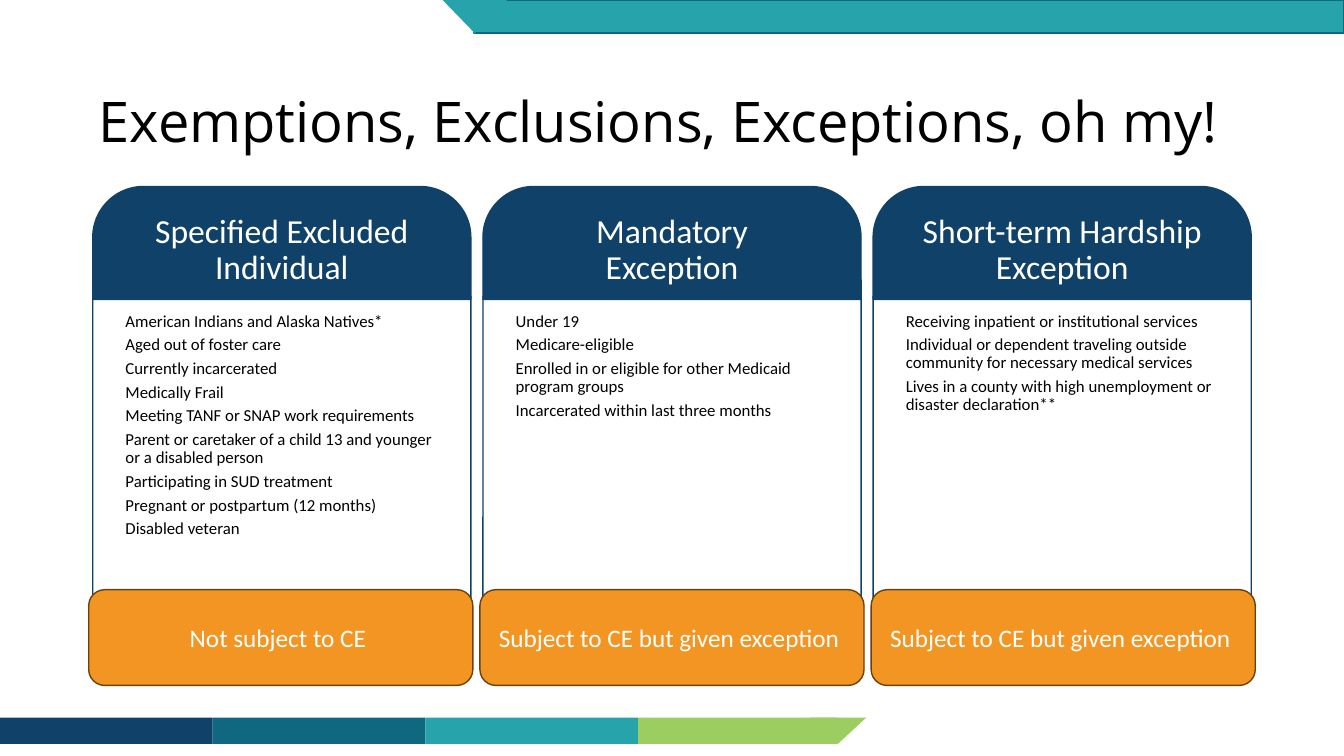
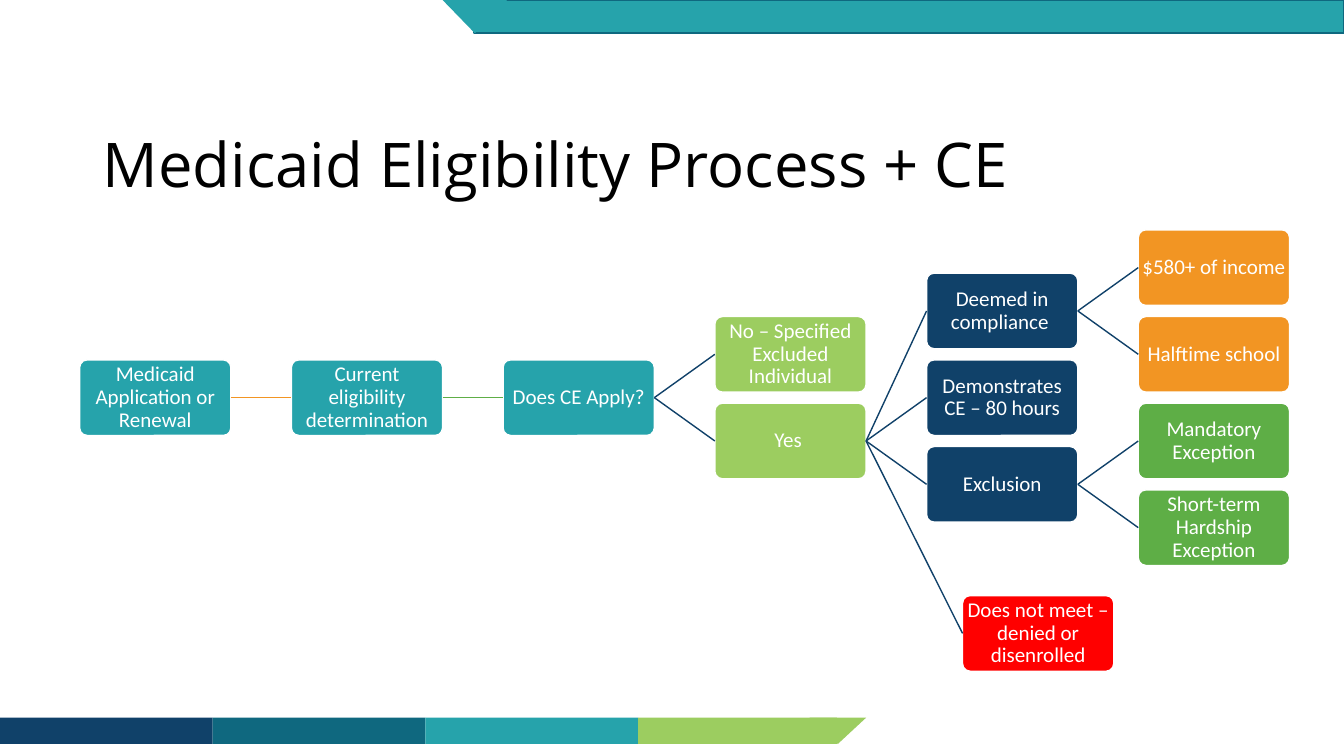
from lxml import etree
from pptx import Presentation
from pptx.dml.color import RGBColor
from pptx.enum.shapes import MSO_CONNECTOR, MSO_SHAPE as SHAPE
from pptx.enum.text import MSO_ANCHOR as ANCHOR, MSO_AUTO_SIZE, PP_ALIGN as ALIGN
from pptx.oxml.ns import qn
from pptx.util import Inches, Pt

NAVY = RGBColor(0x10, 0x41, 0x69)
PETROL = RGBColor(0x0F, 0x68, 0x7F)
TEAL = RGBColor(0x26, 0xA3, 0xAB)
LIME = RGBColor(0x9C, 0xCD, 0x60)
GREEN = RGBColor(0x5E, 0xAE, 0x46)
ORANGE = RGBColor(0xF2, 0x95, 0x23)
BROWN = RGBColor(0x6A, 0x41, 0x0F)
RED = RGBColor(0xFF, 0x00, 0x00)
WHITE = RGBColor(0xFF, 0xFF, 0xFF)
BLACK = RGBColor(0x00, 0x00, 0x00)

SLIDE_WIDTH, SLIDE_HEIGHT = 13.33, 7.5
TITLE_FONT, BODY_FONT = "Open Sans", "Calibri"
TITLE_SIZE = (11.5, 1.45)

FOOTER_TOP, FOOTER_HEIGHT, FOOTER_STEP = 7.12, 0.26, 2.11
FOOTER_BANDS = [(NAVY, 2.11), (PETROL, 2.11), (TEAL, 2.11), (LIME, 1.97)]
HEADER_LEFT, HEADER_HEIGHT = 4.7, 0.33

EXEMPTIONS_TITLE = "Exemptions, Exclusions, Exceptions, oh my!"
CARDS = [
    ("Specified Excluded Individual", "Not subject to CE ", [
        "American Indians and Alaska Natives*",
        "Aged out of foster care",
        "Currently incarcerated",
        "Medically Frail",
        "Meeting TANF or SNAP work requirements",
        "Parent or caretaker of a child 13 and younger or a disabled person",
        "Participating in SUD treatment",
        "Pregnant or postpartum (12 months)",
        "Disabled veteran",
    ]),
    ("Mandatory Exception", "Subject to CE but given exception ", [
        "Under 19",
        "Medicare-eligible",
        "Enrolled in or eligible for other Medicaid program groups",
        "Incarcerated within last three months",
    ]),
    ("Short-term Hardship Exception", "Subject to CE but given exception ", [
        "Receiving inpatient or institutional services",
        "Individual or dependent traveling outside community for necessary medical services",
        "Lives in a county with high unemployment or disaster declaration**",
    ]),
]
CARD_WIDTH, CARD_PITCH = 3.75, 3.87
VERDICT_WIDTH, VERDICT_PITCH = 3.81, 3.88

PROCESS_TITLE = "Medicaid Eligibility Process + CE"
STEPS = [
    ("application", "Medicaid Application or Renewal", 0, 3, TEAL),
    ("determination", "Current eligibility determination", 1, 3, TEAL),
    ("applies", "Does CE Apply?", 2, 3, TEAL),
    ("no", "No – Specified Excluded Individual", 3, 2, LIME),
    ("yes", "Yes ", 3, 4, LIME),
    ("deemed", "Deemed in compliance ", 4, 1, NAVY),
    ("income", "$580+ of income", 5, 0, ORANGE),
    ("school", "Halftime school", 5, 2, ORANGE),
    ("demonstrates", "Demonstrates CE – 80 hours", 4, 3, NAVY),
    ("exclusion", "Exclusion", 4, 5, NAVY),
    ("mandatory", "Mandatory Exception", 5, 4, GREEN),
    ("hardship", "Short-term Hardship Exception", 5, 6, GREEN),
    ("denied", "Does not meet – denied or disenrolled", 4.17, 8.44, RED),
]
LINKS = [
    ("application", ["determination"], ORANGE),
    ("determination", ["applies"], GREEN),
    ("applies", ["no", "yes"], NAVY),
    ("yes", ["deemed", "demonstrates", "exclusion", "denied"], NAVY),
    ("deemed", ["income", "school"], NAVY),
    ("exclusion", ["mandatory", "hardship"], NAVY),
]
STEP_WIDTH, STEP_HEIGHT = 1.5, 0.75
FLOW_LEFT, FLOW_TOP = 0.79, 2.28
COLUMN_STEP, ROW_STEP = 2.1, 0.43


def add_block(slide, kind, box, fill, line=None, adjustments=()):
    shape = slide.shapes.add_shape(kind, *map(Inches, box))
    shape.shadow.inherit = False
    shape.fill.solid()
    shape.fill.fore_color.rgb = fill
    if line is None:
        shape.line.fill.background()
    else:
        shape.line.color.rgb = line
        shape.line.width = Pt(1)
    for index, value in enumerate(adjustments):
        shape.adjustments[index] = value
    return shape


def write(shape, lines, size, color=WHITE, font=BODY_FONT, align=ALIGN.CENTER,
          anchor=ANCHOR.MIDDLE, insets=(0.1, 0.05), spacing=0.9, after=0):
    frame = shape.text_frame
    frame.word_wrap = True
    frame.auto_size = MSO_AUTO_SIZE.NONE
    frame.vertical_anchor = anchor
    frame.margin_left = frame.margin_right = Inches(insets[0])
    frame.margin_top = frame.margin_bottom = Inches(insets[1])
    for index, line in enumerate(lines):
        paragraph = frame.add_paragraph() if index else frame.paragraphs[0]
        paragraph.alignment = align
        paragraph.line_spacing = spacing
        paragraph.space_after = Pt(after)
        run = paragraph.add_run()
        run.text = line
        run.font.size = Pt(size)
        run.font.name = font
        run.font.color.rgb = color


def add_bands(slide, layout):
    bands = [
        add_block(slide, SHAPE.RECTANGLE,
                  (index * FOOTER_STEP, FOOTER_TOP, width, FOOTER_HEIGHT), color)
        for index, (color, width) in enumerate(FOOTER_BANDS)
    ]
    footer_tip = add_block(slide, SHAPE.ISOSCELES_TRIANGLE,
                           (8.03, FOOTER_TOP, 0.56, FOOTER_HEIGHT), LIME)
    header = add_block(slide, SHAPE.RECTANGLE,
                       (HEADER_LEFT, 0, SLIDE_WIDTH - HEADER_LEFT, HEADER_HEIGHT),
                       TEAL, PETROL)
    header_tip = add_block(slide, SHAPE.ISOSCELES_TRIANGLE,
                           (4.39, 0, 0.64, HEADER_HEIGHT), TEAL)
    footer_tip.rotation = header_tip.rotation = 180
    for shape in bands + [footer_tip, header, header_tip]:
        layout.shapes.element.append(shape.element)


def add_titled_slide(presentation, layout, text, left, top, size):
    slide = presentation.slides.add_slide(layout)
    title = slide.shapes.title
    title.left, title.top = Inches(left), Inches(top)
    title.width, title.height = map(Inches, TITLE_SIZE)
    write(title, [text], size, BLACK, TITLE_FONT, ALIGN.LEFT)
    return slide


def column_left(index, count, width, pitch):
    return SLIDE_WIDTH / 2 + (index - (count - 1) / 2) * pitch - width / 2


def add_cards(slide):
    count = len(CARDS)
    for index, (heading, _, items) in enumerate(CARDS):
        left = column_left(index, count, CARD_WIDTH, CARD_PITCH)
        body = add_block(slide, SHAPE.ROUND_2_SAME_RECTANGLE,
                         (left, 2.94, CARD_WIDTH, 3.82), WHITE, NAVY, (0, 0.15))
        write(body, items, 12, BLACK, align=ALIGN.LEFT, anchor=ANCHOR.TOP,
              insets=(0.16, 0.16), after=4)
        header = add_block(slide, SHAPE.ROUND_2_SAME_RECTANGLE,
                           (left, 1.85, CARD_WIDTH, 1.12), NAVY, NAVY, (0.45, 0))
        write(header, [heading], 24, insets=(0.3, 0.1))
    for index, (_, verdict, _) in enumerate(CARDS):
        left = column_left(index, count, VERDICT_WIDTH, VERDICT_PITCH)
        button = add_block(slide, SHAPE.ROUNDED_RECTANGLE,
                           (left, 5.85, VERDICT_WIDTH, 0.95), ORANGE, BROWN)
        write(button, [verdict], 18, spacing=1)


def add_flow(slide):
    steps = {}
    for key, text, column, row, color in STEPS:
        box = (FLOW_LEFT + column * COLUMN_STEP, FLOW_TOP + row * ROW_STEP,
               STEP_WIDTH, STEP_HEIGHT)
        steps[key] = add_block(slide, SHAPE.ROUNDED_RECTANGLE, box, color, WHITE, (0.1,))
        write(steps[key], [text], 15, insets=(0.01, 0.01))
    for source, targets, color in LINKS:
        for target in targets:
            link = slide.shapes.add_connector(MSO_CONNECTOR.STRAIGHT, 0, 0, 0, 0)
            link.begin_connect(steps[source], 3)
            link.end_connect(steps[target], 1)
            link.line.color.rgb = color
            link.line.width = Pt(1)
            etree.SubElement(link.element.spPr, qn("a:effectLst"))


def main():
    presentation = Presentation()
    presentation.slide_width = Inches(SLIDE_WIDTH)
    presentation.slide_height = Inches(SLIDE_HEIGHT)
    layout = presentation.slide_layouts[5]
    exemptions = add_titled_slide(presentation, layout, EXEMPTIONS_TITLE, 0.88, 0.51, 40)
    add_bands(exemptions, layout)
    add_cards(exemptions)
    process = add_titled_slide(presentation, layout, PROCESS_TITLE, 0.92, 0.94, 44)
    add_flow(process)
    presentation.save("out.pptx")


if __name__ == "__main__":
    main()
